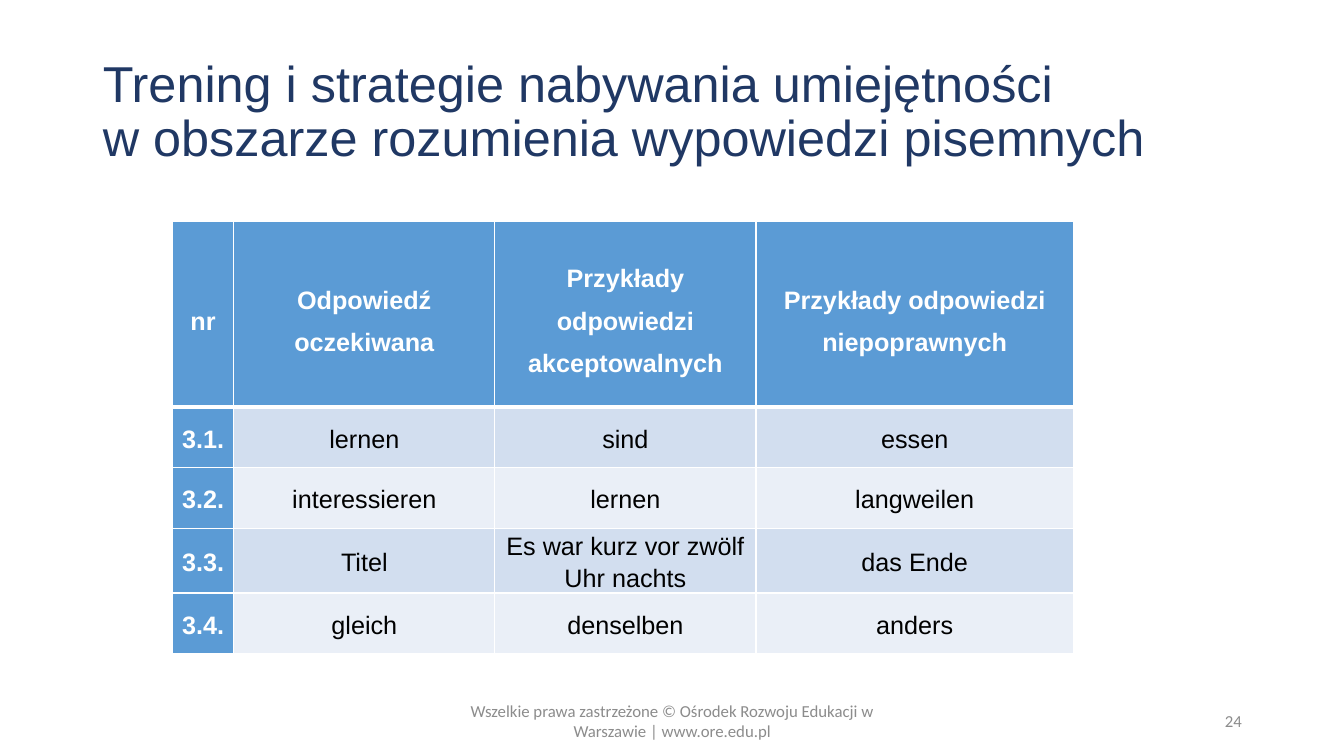
from dataclasses import dataclass

from lxml.etree import SubElement
from pptx import Presentation
from pptx.dml.color import RGBColor
from pptx.enum.text import MSO_ANCHOR as Anchor, MSO_AUTO_SIZE as AutoSize, PP_ALIGN as Align
from pptx.oxml.ns import qn
from pptx.util import Pt


@dataclass(frozen=True)
class Theme:
    """Colours, fonts and type sizes of the slide."""
    navy: str = "203864"
    blue: str = "5B9BD5"
    bands: tuple = ("D2DEEF", "EAEFF7")
    white: str = "FFFFFF"
    black: str = "000000"
    grey: str = "8C8C8C"
    body_font: str = "Arial"
    footer_font: str = "Calibri"
    title_size: int = 36
    table_size: int = 18
    footer_size: int = 12


THEME = Theme()
TITLE = "Trening i strategie nabywania umiejętności\nw obszarze rozumienia wypowiedzi pisemnych"
ANSWERS = [
    ["nr", "Odpowiedź oczekiwana", "Przykłady odpowiedzi akceptowalnych",
     "Przykłady odpowiedzi niepoprawnych"],
    ["3.1.", "lernen", "sind", "essen"],
    ["3.2.", "interessieren", "lernen", "langweilen"],
    ["3.3.", "Titel", "Es war kurz vor zwölf Uhr nachts", "das Ende"],
    ["3.4.", "gleich", "denselben", "anders"],
]
COLUMN_WIDTHS = [43.9, 186.5, 186.5, 226.8]
ROW_HEIGHTS = [132.5] + [43.2] * 4
FOOTER = "Wszelkie prawa zastrzeżone © Ośrodek Rozwoju Edukacji w Warszawie | www.ore.edu.pl"


def write_text(frame, text, *, size, color, font=THEME.body_font, bold=False,
               align=Align.LEFT, spacing=1.0):
    """Write one formatted paragraph, breaking lines at newlines."""
    frame.word_wrap = True
    para = frame.paragraphs[0]
    para.alignment = align
    para.line_spacing = spacing
    for index, line in enumerate(text.split("\n")):
        if index:
            para.add_line_break()
        span = para.add_run()
        span.text = line
        span.font.name = font
        span.font.size = Pt(size)
        span.font.bold = bold
        span.font.color.rgb = RGBColor.from_string(color)
    for line_break in para._p.findall(qn("a:br")):
        SubElement(line_break, qn("a:rPr"), sz=str(size * 100))


def place_title(page):
    """Move and fill the title placeholder."""
    title = page.shapes.title
    title.left, title.top, title.width, title.height = Pt(66.24), Pt(28.75), Pt(828), Pt(104.4)
    title.text_frame.auto_size = AutoSize.NONE
    title.text_frame.vertical_anchor = Anchor.MIDDLE
    write_text(title.text_frame, TITLE, size=THEME.title_size, color=THEME.navy, spacing=0.9)


def add_footer_text(page, text, left, width, align):
    """Add a grey text box on the footer line."""
    box = page.shapes.add_textbox(Pt(left), Pt(500.5), Pt(width), Pt(28.75))
    box.text_frame.vertical_anchor = Anchor.MIDDLE
    write_text(box.text_frame, text, size=THEME.footer_size, color=THEME.grey,
               font=THEME.footer_font, align=align)


def set_borders(cell, top, bottom):
    """Draw white cell borders with the given top and bottom widths."""
    properties = cell._tc.get_or_add_tcPr()
    for side, width in (("L", 1), ("R", 1), ("T", top), ("B", bottom)):
        line = SubElement(properties, qn(f"a:ln{side}"), w=str(Pt(width)))
        fill = SubElement(line, qn("a:solidFill"))
        SubElement(fill, qn("a:srgbClr"), val=THEME.white)


def format_cell(cell, text, row, column):
    """Fill one cell in the header or the body style."""
    heading = row == 0 or column == 0
    cell.vertical_anchor = Anchor.MIDDLE
    cell.margin_left = cell.margin_right = Pt(5)
    cell.margin_top = cell.margin_bottom = Pt(0)
    set_borders(cell, top=3 if row == 1 else 1, bottom=3 if row == 0 else 1)
    cell.fill.solid()
    color = THEME.blue if heading else THEME.bands[(row - 1) % 2]
    cell.fill.fore_color.rgb = RGBColor.from_string(color)
    write_text(cell.text_frame, text, size=THEME.table_size, bold=heading,
               color=THEME.white if heading else THEME.black,
               align=Align.CENTER, spacing=1.15 if row else 1.5)


def add_answer_table(page):
    """Add the table of expected, accepted and wrong answers."""
    frame = page.shapes.add_table(len(ROW_HEIGHTS), len(COLUMN_WIDTHS), Pt(123.1), Pt(158.4),
                                  Pt(sum(COLUMN_WIDTHS)), Pt(sum(ROW_HEIGHTS)))
    table = frame.table
    table.first_col = True
    for column, width in zip(table.columns, COLUMN_WIDTHS):
        column.width = Pt(width)
    for row, height in zip(table.rows, ROW_HEIGHTS):
        row.height = Pt(height)
    for row, answers in enumerate(ANSWERS):
        for column, text in enumerate(answers):
            format_cell(table.cell(row, column), text, row, column)


def main():
    """Build and save the slide."""
    deck = Presentation()
    deck.slide_width, deck.slide_height = Pt(960), Pt(540)
    page = deck.slides.add_slide(deck.slide_layouts.get_by_name("Title Only"))
    place_title(page)
    add_answer_table(page)
    add_footer_text(page, FOOTER, 318.25, 324, Align.CENTER)
    add_footer_text(page, "24", 678.25, 216, Align.RIGHT)
    deck.save("out.pptx")


if __name__ == "__main__":
    main()
